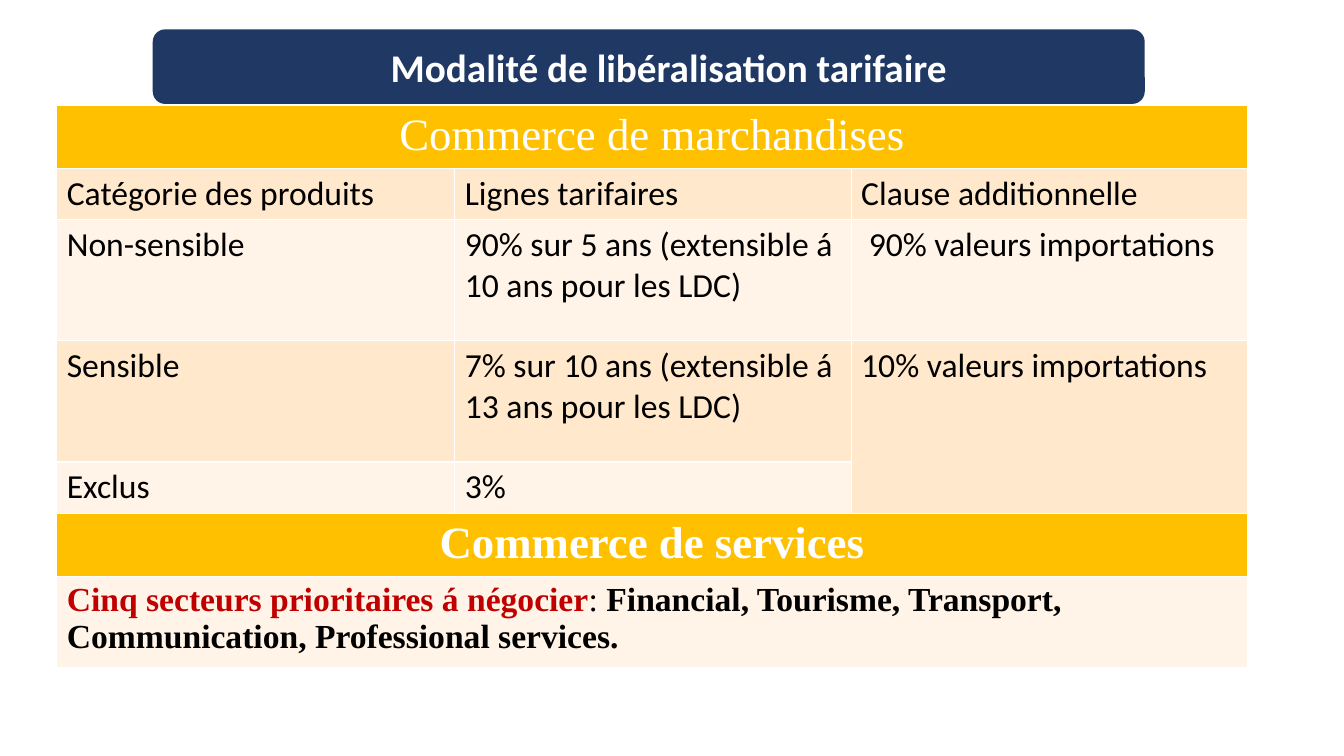
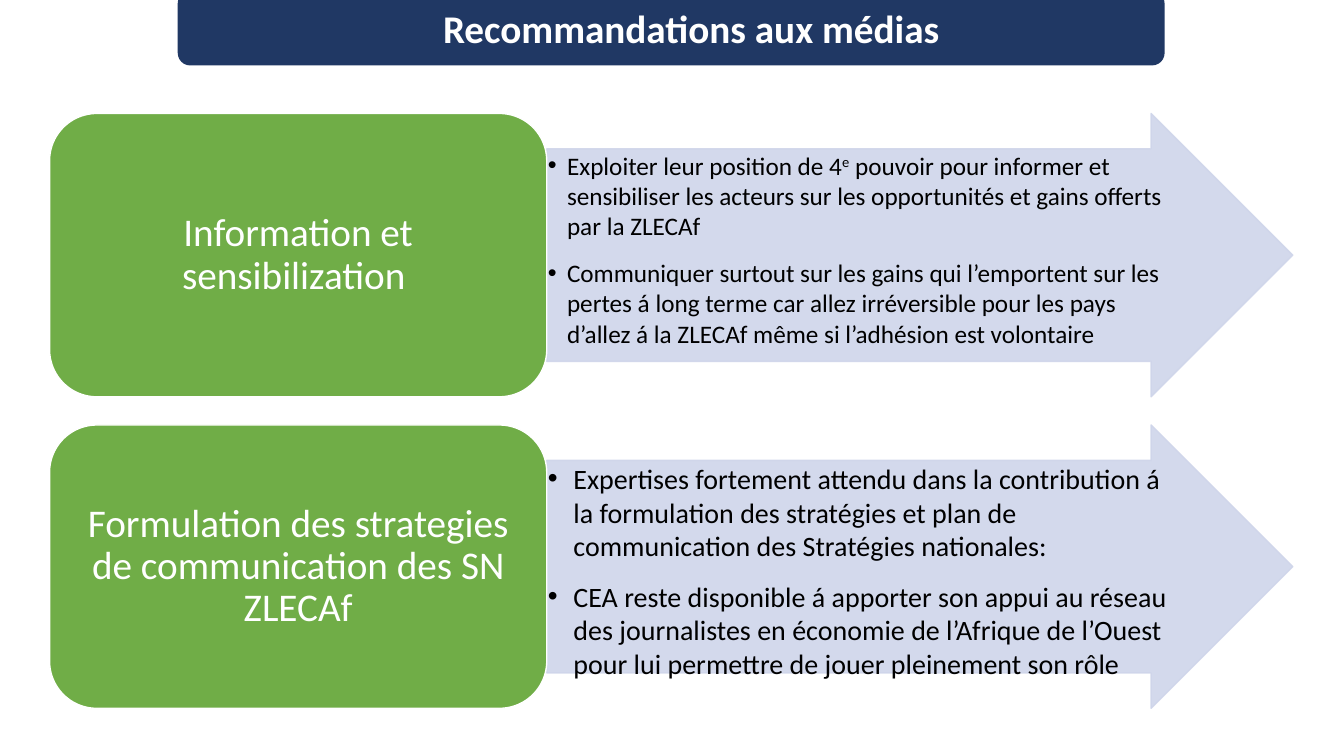
from pptx import Presentation
from pptx.dml.color import RGBColor
from pptx.enum.shapes import MSO_SHAPE
from pptx.enum.text import MSO_ANCHOR, MSO_AUTO_SIZE, PP_ALIGN
from pptx.oxml import parse_xml
from pptx.oxml.ns import nsdecls, qn
from pptx.util import Cm, Pt

NAVY, GOLD, GREEN, LAVENDER = "203864", "FFC000", "70AD47", "CFD5EA"
PEACH, CREAM, RED, BLACK, WHITE = "FFE8CC", "FFF4E7", "C00000", "000000", "FFFFFF"
SANS, SERIF = "Calibri", "Times New Roman"
TITLE_ONLY, TWO_CONTENT = 5, 3


def rgb(value):
    return RGBColor.from_string(value)


def add_run(p, text, size=24, font=SANS, color=BLACK, bold=False, raised=False):
    r = p.add_run()
    r.text = text
    r.font.size = Pt(size)
    r.font.name = font
    r.font.color.rgb = rgb(color)
    r.font.bold = bold
    if raised:
        r._r.get_or_add_rPr().set("baseline", "30000")


def set_indent(p, left, first=0):
    pPr = p._p.get_or_add_pPr()
    pPr.set("marL", str(Cm(left)))
    pPr.set("indent", str(Cm(first)))


def set_frame(tf, anchor, side, top):
    """Wrap the text, fix its size and set equal opposite margins."""
    tf.word_wrap = True
    tf.auto_size = MSO_AUTO_SIZE.NONE
    tf.vertical_anchor = anchor
    tf.margin_left = tf.margin_right = Cm(side)
    tf.margin_top = tf.margin_bottom = Cm(top)


def set_opacity(sp, percent):
    for clr in sp._element.spPr.iter(qn("a:srgbClr")):
        clr.append(parse_xml(f'<a:alpha {nsdecls("a")} val="{percent * 1000}"/>'))


class Deck:
    """Holds the presentation, its style and the current slide."""

    def __init__(self):
        self.prs = Presentation()
        self.prs.slide_width, self.prs.slide_height = Cm(33.87), Cm(19.05)

    def new_slide(self, layout):
        self.s = self.prs.slides.add_slide(self.prs.slide_layouts[layout])

    def place(self, sp, left, top, width, height):
        """Move a placeholder and bring it to the front."""
        sp.left, sp.top, sp.width, sp.height = map(Cm, (left, top, width, height))
        self.s.shapes._spTree.append(sp._element)

    def shape(self, kind, box, fill, line=None):
        sp = self.s.shapes.add_shape(kind, *map(Cm, box))
        sp.shadow.inherit = False
        sp.fill.solid()
        sp.fill.fore_color.rgb = rgb(fill)
        if line:
            sp.line.color.rgb = rgb(line)
            sp.line.width = Pt(1)
        else:
            sp.line.fill.background()
        return sp

    def title(self, text, left, top, width):
        box = left, top, width, 1.88
        self.shape(MSO_SHAPE.ROUNDED_RECTANGLE, box, NAVY)
        sp = self.s.shapes.title
        self.place(sp, *box)
        set_frame(sp.text_frame, MSO_ANCHOR.MIDDLE, 0.25, 0.25)
        p = sp.text_frame.paragraphs[0]
        p.alignment = PP_ALIGN.CENTER
        set_indent(p, 1)
        add_run(p, text, size=28, color=WHITE, bold=True)

    def table(self, left, top, widths, heights):
        frame = self.s.shapes.add_table(len(heights), len(widths), Cm(left), Cm(top),
                                        Cm(sum(widths)), Cm(sum(heights)))
        table = frame.table
        for col, width in zip(table.columns, widths):
            col.width = Cm(width)
        for row, height in zip(table.rows, heights):
            row.height = Cm(height)
        return table

    def cell(self, cell, fill, *runs, align=PP_ALIGN.LEFT):
        """Fill a cell; each run is a text and a dict of its format."""
        cell.fill.solid()
        cell.fill.fore_color.rgb = rgb(fill)
        p = cell.text_frame.paragraphs[0]
        p.alignment = align
        for text, style in runs:
            add_run(p, text, **style)

    def section(self, table, row, text, bold):
        """Write a gold heading across a whole table row."""
        first = table.cell(row, 0)
        first.merge(table.cell(row, len(table.columns) - 1))
        style = dict(size=32, font=SERIF, color=WHITE, bold=bold)
        self.cell(first, GOLD, (text, style), align=PP_ALIGN.CENTER)

    def label(self, text, box):
        sp = self.shape(MSO_SHAPE.ROUNDED_RECTANGLE, box, GREEN, WHITE)
        set_frame(sp.text_frame, MSO_ANCHOR.MIDDLE, 0.3, 0.15)
        p = sp.text_frame.paragraphs[0]
        p.alignment = PP_ALIGN.CENTER
        p.line_spacing = 0.9
        add_run(p, text, size=28, color=WHITE)

    def arrow(self, box):
        sp = self.shape(MSO_SHAPE.RIGHT_ARROW, box, LAVENDER, LAVENDER)
        sp.adjustments[0], sp.adjustments[1] = 0.75, 0.5
        set_opacity(sp, 90)

    def bullets(self, sp, items, box, size, indent):
        """Each item is a list of texts; every second text is raised."""
        self.place(sp, *box)
        tf = sp.text_frame
        set_frame(tf, MSO_ANCHOR.TOP, 0.03, 0.03)
        for i, texts in enumerate(items):
            p = tf.add_paragraph() if i else tf.paragraphs[0]
            set_indent(p, indent, -indent)
            p.alignment = PP_ALIGN.LEFT
            p.space_before, p.space_after = Pt(0), Pt(12)
            for j, text in enumerate(texts):
                add_run(p, text, size=size, raised=j % 2 == 1)


def tariff_slide(deck):
    deck.new_slide(TITLE_ONLY)
    deck.title("Modalité de libéralisation tarifaire", 3.85, 0.74, 25)
    table = deck.table(1.43, 2.65, (10.03, 9.99, 9.99),
                       (1.6, 1.29, 3.05, 3.05, 1.29, 1.6, 2.3))
    deck.section(table, 0, "Commerce de marchandises", bold=False)
    rows = [
        ("Catégorie des produits", "Lignes tarifaires", "Clause additionnelle"),
        ("Non-sensible", "90% sur 5 ans (extensible á 10 ans pour les LDC)",
         " 90% valeurs importations"),
        ("Sensible", "7% sur 10 ans (extensible á 13 ans pour les LDC)",
         "10% valeurs importations"),
        ("Exclus", "3%"),
    ]
    for i, row in enumerate(rows, 1):
        for j, text in enumerate(row):
            deck.cell(table.cell(i, j), PEACH if i % 2 else CREAM, (text, {}))
    table.cell(3, 2).merge(table.cell(4, 2))
    deck.section(table, 5, "Commerce de services", bold=True)
    sectors = table.cell(6, 0)
    sectors.merge(table.cell(6, 2))
    deck.cell(sectors, CREAM,
              ("Cinq secteurs prioritaires á négocier",
               dict(font=SERIF, color=RED, bold=True)),
              (": ", dict(font=SERIF)),
              ("Financial, Tourisme, Transport, Communication, Professional services.",
               dict(font=SERIF, bold=True)))


def media_slide(deck):
    deck.new_slide(TWO_CONTENT)
    deck.title("Recommandations aux médias", 4.48, -0.23, 24.87)
    blocks = [
        ("Information et sensibilization ", 18, 0.48, [
            ["Exploiter leur position de 4", "e",
             " pouvoir pour informer et sensibiliser les acteurs sur les "
             "opportunités et gains offerts par la ZLECAf"],
            ["Communiquer surtout sur les gains qui l’emportent sur les pertes á "
             "long terme car allez irréversible pour les pays d’allez á la ZLECAf "
             "même si l’adhésion est volontaire"]]),
        ("Formulation des strategies de communication des SN ZLECAf", 20, 0.64, [
            ["Expertises fortement attendu dans la contribution á la formulation "
             "des stratégies et plan de communication des Stratégies nationales:"],
            ["CEA reste disponible á apporter son appui au réseau des journalistes "
             "en économie de l’Afrique de l’Ouest pour lui permettre de jouer "
             "pleinement son rôle"]]),
    ]
    bodies = list(deck.s.placeholders)[1:]
    for i, (heading, size, indent, items) in enumerate(blocks):
        top = 2.86 + 7.85 * i
        deck.arrow((13.78, top, 18.8, 7.14))
        deck.bullets(bodies[i], items, (13.78, top + 0.89, 16.1, 5.36), size, indent)
        deck.label(heading, (1.25, top, 12.53, 7.14))


def main():
    deck = Deck()
    tariff_slide(deck)
    media_slide(deck)
    deck.prs.save("out.pptx")


if __name__ == "__main__":
    main()
